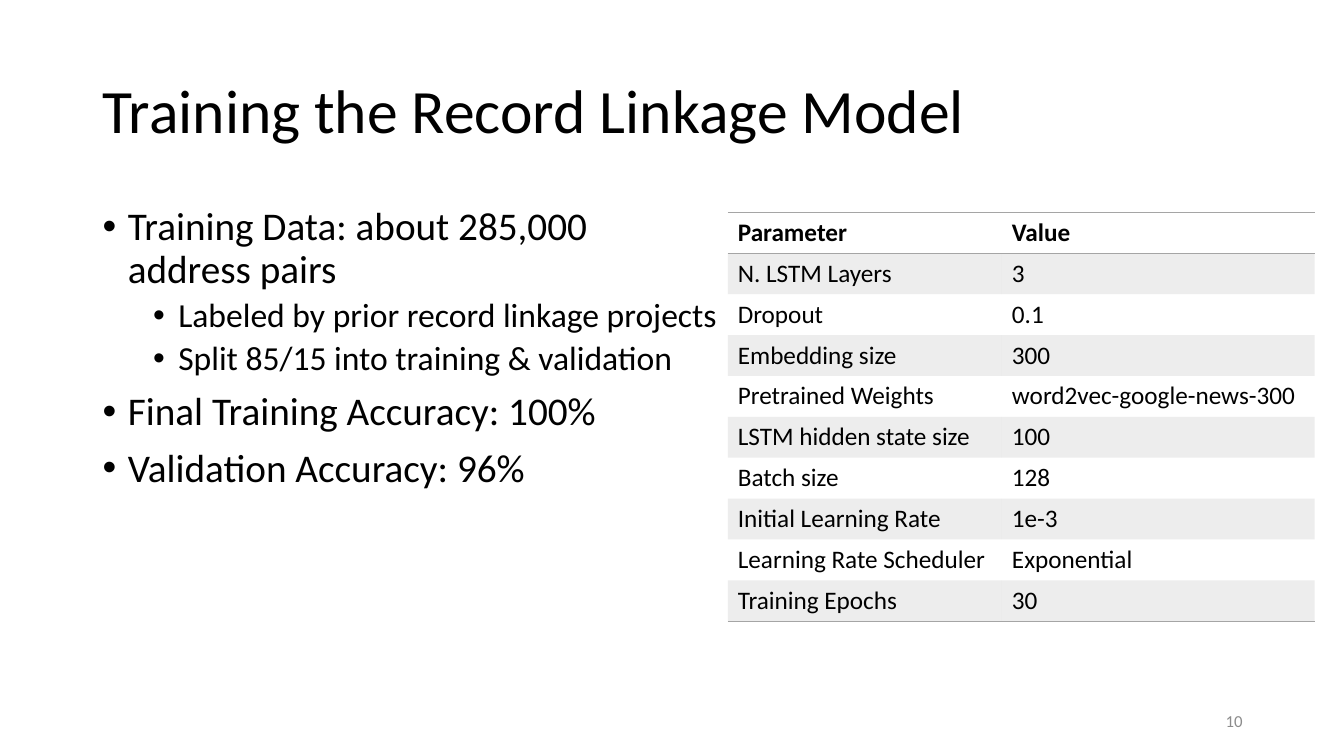
from lxml import etree
from pptx import Presentation
from pptx import util as u
from pptx.dml.color import RGBColor
from pptx.enum import text
from pptx.oxml.ns import qn

W, H = u.Inches(13.33), u.Inches(7.5)
FONT = "Calibri"
BLACK = RGBColor(0x00, 0x00, 0x00)
PAGE_GRAY = RGBColor(0x8C, 0x8C, 0x8C)
TABLE_GRAY = RGBColor(0xA5, 0xA5, 0xA5)
NO_STYLE = "{2D5ABB26-0587-4C30-8999-92F81FD0307C}"
LEVELS = [(28, 10, 0.25), (24, 5, 0.75)]

BULLETS = [
    (0, "Training Data: about 285,000 address pairs"),
    (1, "Labeled by prior record linkage projects"),
    (1, "Split 85/15 into training & validation"),
    (0, "Final Training Accuracy: 100%"),
    (0, "Validation Accuracy: 96%"),
]
PARAMETERS = [
    ("Parameter", "Value"),
    ("N. LSTM Layers", "3"),
    ("Dropout", "0.1"),
    ("Embedding size", "300"),
    ("Pretrained Weights", "word2vec-google-news-300"),
    ("LSTM hidden state size", "100"),
    ("Batch size", "128"),
    ("Initial Learning Rate", "1e-3"),
    ("Learning Rate Scheduler", "Exponential"),
    ("Training Epochs", "30"),
]


def share(left, top, width, height):
    return int(left * W), int(top * H), int(width * W), int(height * H)


def style(p, size, color=BLACK, bold=False):
    for r in p.runs:
        f = r.font
        f.name, f.size, f.bold = FONT, u.Pt(size), bold
        f.color.rgb = color


def add_frame(s, box, anchor=text.MSO_ANCHOR.TOP):
    tf = s.shapes.add_textbox(*box).text_frame
    tf.word_wrap = True
    tf.vertical_anchor = anchor
    return tf


def add_title(s, box, title):
    p = add_frame(s, box, text.MSO_ANCHOR.MIDDLE).paragraphs[0]
    p.text = title
    p.line_spacing = 0.9
    style(p, 44)


def add_page_number(s, box, number):
    p = add_frame(s, box, text.MSO_ANCHOR.MIDDLE).paragraphs[0]
    p.text = number
    p.alignment = text.PP_ALIGN.RIGHT
    style(p, 12, PAGE_GRAY)


def add_bullets(s, box, items):
    tf = add_frame(s, box)
    for i, (level, line) in enumerate(items):
        p = tf.paragraphs[0] if i == 0 else tf.add_paragraph()
        size, before, indent = LEVELS[level]
        p.text = line
        p.level = level
        p.line_spacing = 0.9
        if i:
            p.space_before = u.Pt(before)
        pPr = p._p.get_or_add_pPr()
        pPr.set("marL", str(u.Inches(indent)))
        pPr.set("indent", str(u.Inches(-0.25)))
        etree.SubElement(pPr, qn("a:buFont")).set("typeface", "Arial")
        etree.SubElement(pPr, qn("a:buChar")).set("char", "•")
        style(p, size)


def add_rules(cell, sides):
    tcPr = cell._tc.get_or_add_tcPr()
    for i, side in enumerate(sides):
        ln = etree.Element(qn("a:" + side), w=str(u.Pt(1)))
        fill = etree.SubElement(ln, qn("a:solidFill"))
        etree.SubElement(fill, qn("a:srgbClr")).set("val", str(TABLE_GRAY))
        tcPr.insert(i, ln)


def shade(cell):
    cell.fill.solid()
    cell.fill.fore_color.rgb = TABLE_GRAY
    color = cell._tc.tcPr.find(".//" + qn("a:srgbClr"))
    etree.SubElement(color, qn("a:alpha")).set("val", "20000")


def add_parameter_table(s, box, rows):
    width, height = box[2:]
    table = s.shapes.add_table(len(rows), 2, *box).table
    table.first_row = True
    table.horz_banding = False
    table._tbl.tblPr.find(qn("a:tableStyleId")).text = NO_STYLE
    table.columns[0].width = int(width * 0.467)
    table.columns[1].width = width - table.columns[0].width
    rules = {0: ["lnT", "lnB"], len(rows) - 1: ["lnB"]}
    for i, values in enumerate(rows):
        table.rows[i].height = height // len(rows)
        for j, value in enumerate(values):
            cell = table.cell(i, j)
            cell.text = value
            style(cell.text_frame.paragraphs[0], 18, bold=i == 0)
            if i % 2:
                shade(cell)
            else:
                cell.fill.background()
            add_rules(cell, rules.get(i, []))


def main():
    prs = Presentation()
    prs.slide_width, prs.slide_height = W, H
    s = prs.slides.add_slide(prs.slide_layouts[6])
    add_title(s, share(0.069, 0.053, 0.863, 0.193),
              "Training the Record Linkage Model")
    add_bullets(s, share(0.069, 0.267, 0.473, 0.635), BULLETS)
    add_page_number(s, share(0.707, 0.927, 0.225, 0.053), "10")
    add_parameter_table(s, share(0.5415, 0.281, 0.4367, 0.541), PARAMETERS)
    prs.save("out.pptx")


if __name__ == "__main__":
    main()
